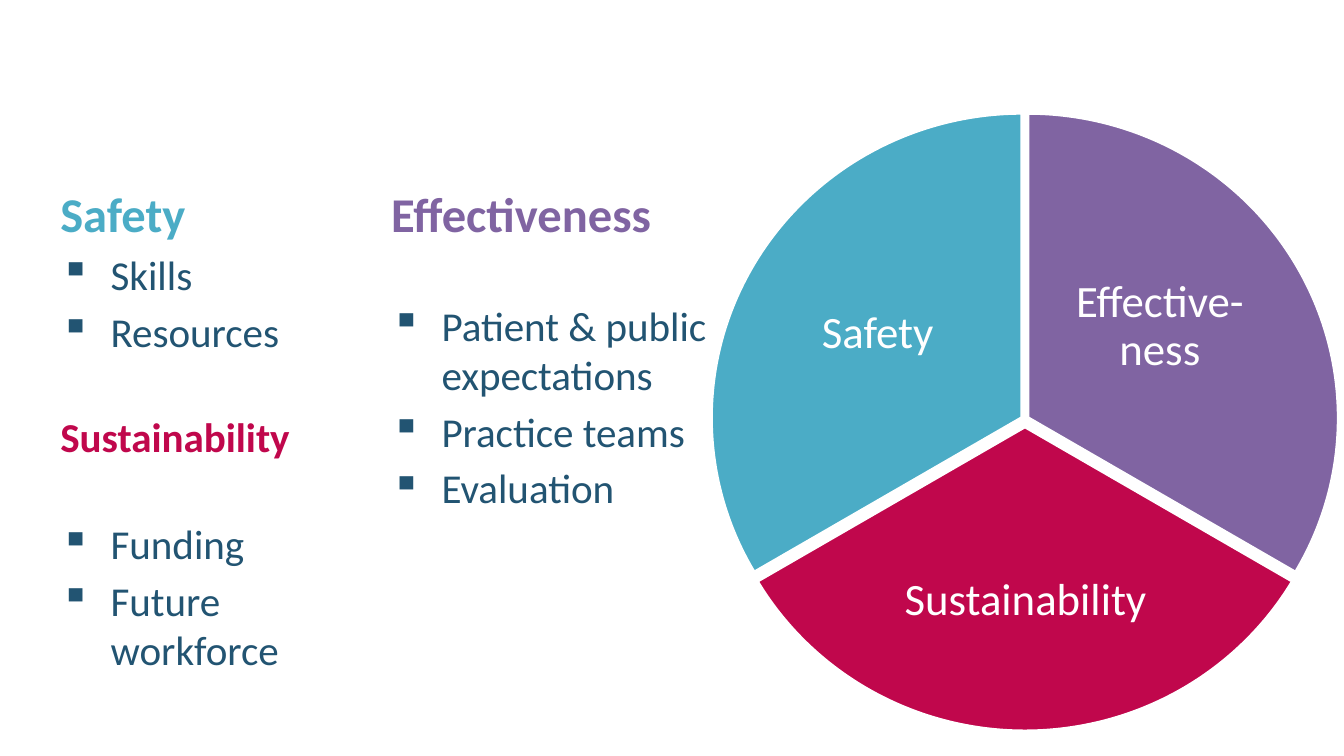
from lxml import etree
from pptx import Presentation
from pptx.dml.color import RGBColor
from pptx.enum.shapes import MSO_SHAPE
from pptx.enum.text import MSO_ANCHOR, PP_ALIGN
from pptx.oxml.ns import qn
from pptx.util import Pt

COLOURS = {
    "safety": "4BACC6",
    "effectiveness": "8064A2",
    "sustainability": "C0074C",
    "body": "225472",
    "white": "FFFFFF",
}
PIE_SIZE = (333.4, 326.9)
INDENT = 27
GAP = 4
WIDE_GAP = 31

WEDGES = [
    ("effectiveness", 383.8, 60.5, 270),
    ("sustainability", 382.4, 65, 30),
    ("safety", 380.9, 60.5, 150),
]
LABELS = [
    ("Effective-ness", 567.4, 123.1, 108, 104.4),
    ("Sustainability", 477.4, 273.6, 144, 97.2),
    ("Safety", 416.2, 126.7, 108, 104.4),
]
TOPICS = [
    ("Safety", "safety", 26, 0, GAP, ["Skills", "Resources"]),
    ("Sustainability", "sustainability", 22, 30, WIDE_GAP, ["Funding", "Future workforce"]),
    ("Effectiveness", "effectiveness", 26, GAP, WIDE_GAP,
     ["Patient & public expectations", "Practice teams", "Evaluation"]),
]


class SlideWriter:
    """Holds the text style and the current slide."""

    def __init__(self, page, font="Calibri"):
        self.page = page
        self.font = font

    def colour(self, name):
        return RGBColor.from_string(COLOURS[name])

    def span(self, para, text, size, colour, bold=False):
        span = para.add_run()
        span.text = text
        span.font.name = self.font
        span.font.size = Pt(size)
        span.font.bold = bold
        span.font.color.rgb = self.colour(colour)

    def wedge(self, colour, left, top, start):
        width, height = PIE_SIZE
        wedge = self.page.shapes.add_shape(
            MSO_SHAPE.PIE, Pt(left), Pt(top), Pt(width), Pt(height))
        for index, angle in enumerate((start, (start + 120) % 360)):
            wedge.adjustments[index] = angle * 0.6
        wedge.shadow.inherit = False
        wedge.fill.solid()
        wedge.fill.fore_color.rgb = self.colour(colour)
        wedge.line.color.rgb = self.colour("white")
        wedge.line.width = Pt(2)

    def box(self, left, top, width, height):
        box = self.page.shapes.add_textbox(Pt(left), Pt(top), Pt(width), Pt(height))
        box.text_frame.word_wrap = True
        return box.text_frame

    def label(self, text, left, top, width, height):
        frame = self.box(left, top, width, height)
        frame.margin_left = frame.margin_right = 0
        frame.margin_top = frame.margin_bottom = 0
        frame.vertical_anchor = MSO_ANCHOR.MIDDLE
        para = frame.paragraphs[0]
        para.alignment = PP_ALIGN.CENTER
        para.line_spacing = 0.9
        self.span(para, text, 24, "white")

    def bullet(self, para, text, space):
        para.space_before = Pt(space)
        properties = para._p.get_or_add_pPr()
        properties.set("marL", str(Pt(INDENT)))
        properties.set("indent", str(-Pt(INDENT)))
        etree.SubElement(properties, qn("a:buChar")).set("char", "▪")
        self.span(para, text, 22, "body")

    def topics(self, topics, left, top, width, height):
        frame = self.box(left, top, width, height)
        frame._txBody.bodyPr.set("numCol", "2")
        for number, (title, colour, size, before, gap, items) in enumerate(topics):
            para = frame.add_paragraph() if number else frame.paragraphs[0]
            para.space_before = Pt(before)
            self.span(para, title, size, colour, bold=True)
            for position, item in enumerate(items):
                self.bullet(frame.add_paragraph(), item, GAP if position else gap)


def main():
    deck = Presentation()
    deck.slide_width, deck.slide_height = Pt(720), Pt(405)
    writer = SlideWriter(deck.slides.add_slide(deck.slide_layouts[6]))
    for wedge in WEDGES:
        writer.wedge(*wedge)
    for label in LABELS:
        writer.label(*label)
    writer.topics(TOPICS, 25.2, 95, 368.6, 287.3)
    deck.save("out.pptx")


if __name__ == "__main__":
    main()
